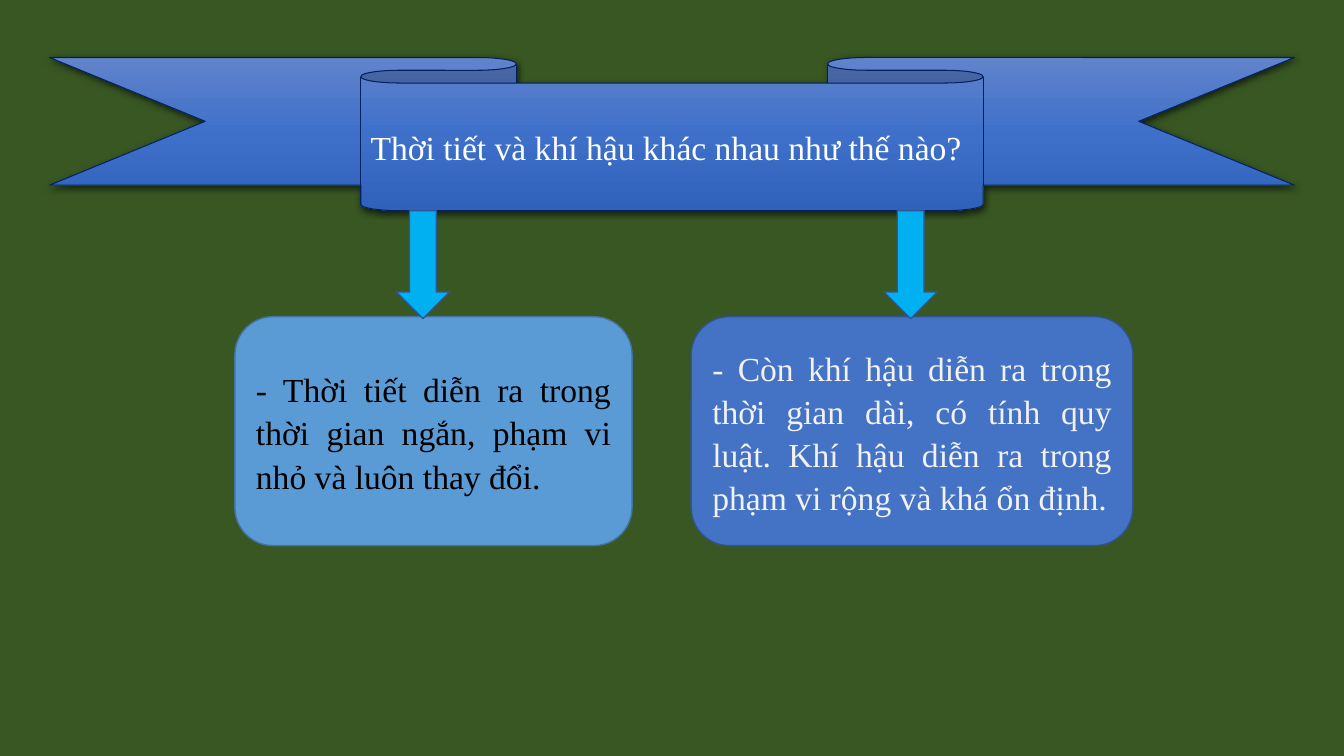
import copy

import pptx
import pptx.dml.color
import pptx.enum.shapes
import pptx.enum.text
import pptx.oxml
import pptx.oxml.ns
import pptx.util

Cm = pptx.util.Cm
Pt = pptx.util.Pt
Shape = pptx.enum.shapes.MSO_SHAPE
Align = pptx.enum.text.PP_ALIGN

COLORS = {
    "background": "385723",
    "ribbon_top": "6183CB",
    "ribbon_middle": "3E70CA",
    "ribbon_bottom": "3062BB",
    "ribbon_line": "002060",
    "weather": "5B9BD5",
    "weather_line": "43739E",
    "climate": "4472C4",
    "blue_line": "325491",
    "arrow": "00B0F0",
    "white": "FFFFFF",
    "black": "000000",
    "pale": "F2F2F2",
}
ARROW_WIDTH, ARROW_HEIGHT = 1.35, 2.72


def color(name):
    return pptx.dml.color.RGBColor.from_string(COLORS[name])


def add_shape(slide, kind, box, line, fill=None, line_width=1):
    """Place a shape without shadow; box is left, top, width, height in cm."""
    shape = slide.shapes.add_shape(kind, *map(Cm, box))
    shape.shadow.inherit = False
    if fill:
        shape.fill.solid()
        shape.fill.fore_color.rgb = color(fill)
    shape.line.color.rgb = color(line)
    shape.line.width = Pt(line_width)
    return shape


def write_text(shape, text, font_color, align=Align.LEFT, size=24,
               line_spacing=None, space_after=None):
    frame = shape.text_frame
    frame.word_wrap = True
    frame.vertical_anchor = pptx.enum.text.MSO_ANCHOR.MIDDLE
    paragraph = frame.paragraphs[0]
    paragraph.alignment = align
    paragraph.line_spacing = line_spacing
    paragraph.space_after = space_after
    run = paragraph.add_run()
    run.text = text
    run.font.name = "Times New Roman"
    run.font.size = Pt(size)
    run.font.color.rgb = color(font_color)


def fill_ribbon_gradient(shape):
    """Fill from top to bottom through three stops."""
    fill = shape.fill
    fill.gradient()
    fill.gradient_angle = 270
    stop_list = shape.element.spPr.find(".//" + pptx.oxml.ns.qn("a:gsLst"))
    stop_list.insert(1, copy.deepcopy(stop_list[0]))
    names = ("ribbon_top", "ribbon_middle", "ribbon_bottom")
    for stop, name, position in zip(fill.gradient_stops, names, (0, 0.5, 1)):
        stop.color.rgb = color(name)
        stop.position = position


def add_shadow(shape):
    effects = shape.element.spPr.find(pptx.oxml.ns.qn("a:effectLst"))
    effects.append(pptx.oxml.parse_xml(
        f'<a:outerShdw {pptx.oxml.ns.nsdecls("a")} blurRad="{Pt(4.5)}" '
        f'dist="{Pt(1.5)}" dir="5400000" algn="ctr" rotWithShape="0">'
        f'<a:srgbClr val="{COLORS["black"]}"><a:alpha val="63000"/></a:srgbClr>'
        '</a:outerShdw>'))


def add_question_ribbon(slide, box, text):
    ribbon = add_shape(slide, Shape.DOWN_RIBBON, box, "ribbon_line", line_width=0.75)
    fill_ribbon_gradient(ribbon)
    add_shadow(ribbon)
    write_text(ribbon, text, "white")


def add_answer(slide, kind, box, text, fill, line, font_color):
    answer = add_shape(slide, kind, box, line, fill)
    write_text(answer, text, font_color, align=Align.JUSTIFY,
               line_spacing=1.07, space_after=Pt(8))


def add_down_arrow(slide, center, top):
    box = (center - ARROW_WIDTH / 2, top, ARROW_WIDTH, ARROW_HEIGHT)
    add_shape(slide, Shape.DOWN_ARROW, box, "blue_line", "arrow")


def build_comparison_slide(presentation):
    slide = presentation.slides.add_slide(presentation.slide_layouts[6])
    slide.background.fill.solid()
    slide.background.fill.fore_color.rgb = color("background")

    left, top, width, height = ribbon_box = (1.25, 1.45, 31.37, 3.86)
    add_question_ribbon(slide, ribbon_box,
                        "Thời tiết và khí hậu khác nhau như thế nào?")
    answer_top, answer_height = 7.98, 5.77
    add_answer(slide, Shape.FLOWCHART_ALTERNATE_PROCESS,
               (5.92, answer_top, 10.01, answer_height),
               "- Thời tiết diễn ra trong thời gian ngắn, phạm vi nhỏ "
               "và luôn thay đổi.",
               "weather", "weather_line", "black")
    add_answer(slide, Shape.ROUNDED_RECTANGLE,
               (17.42, answer_top, 11.13, answer_height),
               "- Còn khí hậu diễn ra trong thời gian dài, có tính quy luật. "
               "Khí hậu diễn ra trong phạm vi rộng và khá ổn định.",
               "climate", "blue_line", "pale")
    for center in (10.66, 22.95):
        add_down_arrow(slide, center, top + height)


def main():
    presentation = pptx.Presentation()
    presentation.slide_width = Cm(33.87)
    presentation.slide_height = Cm(19.05)
    build_comparison_slide(presentation)
    presentation.save("out.pptx")


if __name__ == "__main__":
    main()
